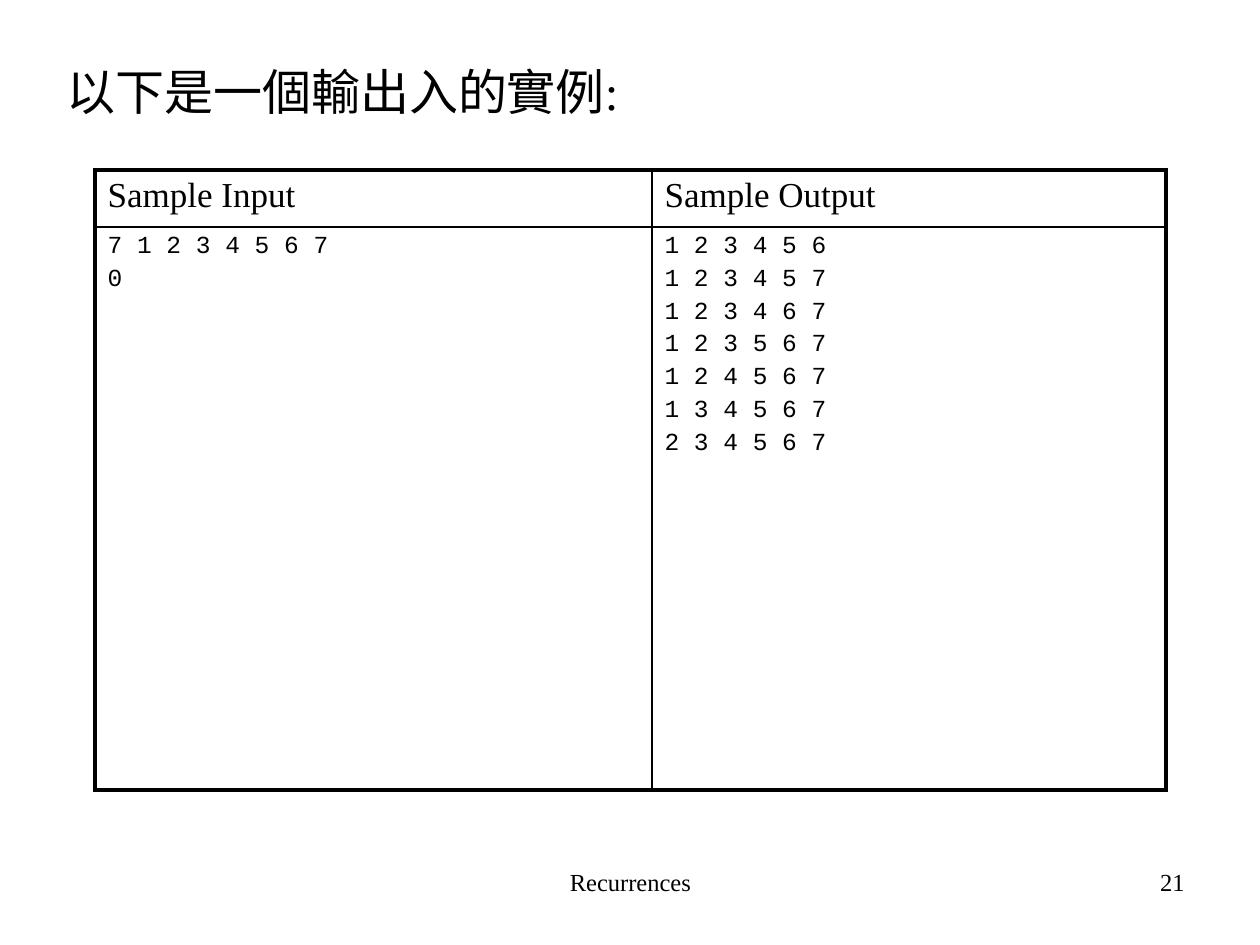
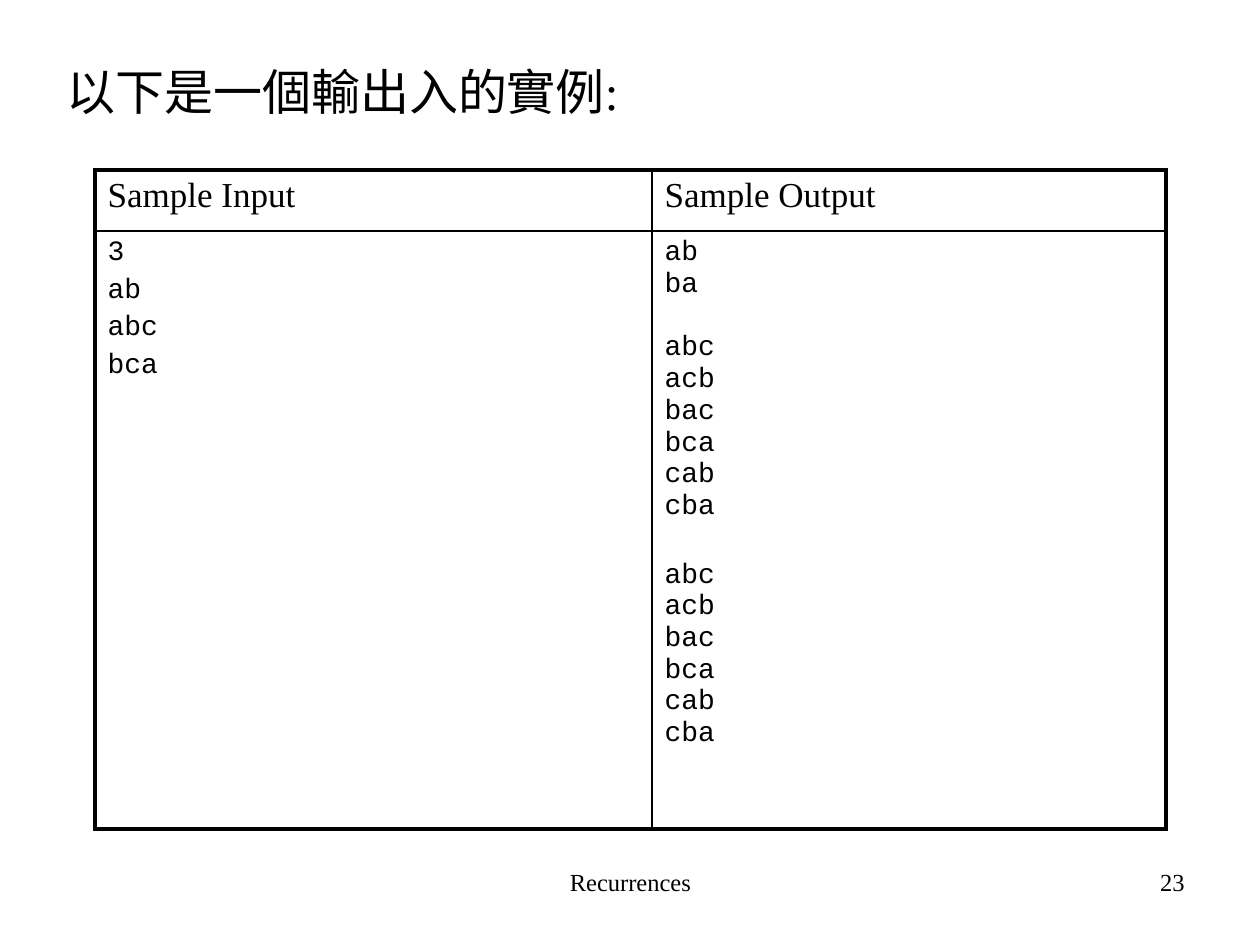
from dataclasses import dataclass

from lxml import etree
from pptx import Presentation
from pptx.dml.color import RGBColor
from pptx.enum.text import MSO_ANCHOR, MSO_AUTO_SIZE, PP_ALIGN
from pptx.oxml.ns import qn
from pptx.util import Emu, Pt

LEFT, CENTER, RIGHT = PP_ALIGN.LEFT, PP_ALIGN.CENTER, PP_ALIGN.RIGHT
TOP = MSO_ANCHOR.TOP
NO_AUTOFIT = MSO_AUTO_SIZE.NONE
TITLE_ONLY_LAYOUT = 5
PX_PER_INCH = 126


@dataclass(frozen=True)
class Theme:
    ink: str = "000000"
    paper: str = "FFFFFF"
    text_font: str = "Times New Roman"
    code_font: str = "Courier New"
    title_size: int = 28
    heading_size: int = 20
    footer_size: int = 14
    outer_border: float = 2.25
    inner_border: float = 1


@dataclass(frozen=True)
class Box:
    left: int
    top: int
    width: int
    height: int


@dataclass(frozen=True)
class Line:
    text: str
    gap: int = 0  # px above the line


@dataclass(frozen=True)
class Sample:
    page: str
    code_size: int
    row_heights: tuple[int, int]
    input_lines: list[Line]
    output_lines: list[Line]


THEME = Theme()
TITLE = "以下是一個輸出入的實例:"
FOOTER = "Recurrences"
HEADINGS = ("Sample Input", "Sample Output")

TITLE_BOX = Box(54, 55, 1134, 100)
FOOTER_BOX = Box(431, 861, 399, 66)
PAGE_BOX = Box(903, 861, 294, 66)
TABLE_LEFT, TABLE_TOP = 95, 170
COLUMN_WIDTHS = (557, 514)


def px(length: int) -> Emu:
    return Emu(round(length * 914400 / PX_PER_INCH))


def lines(texts: list[str], gap: int) -> list[Line]:
    return [Line(text, gap) for text in texts]


def group(texts: list[str], gap_above: int) -> list[Line]:
    """Closely set lines with one gap above the first."""
    return [Line(texts[0], gap_above), *lines(texts[1:], 0)]


PERMUTATIONS = ["abc", "acb", "bac", "bca", "cab", "cba"]
SAMPLES = (
    Sample(
        page="21",
        code_size=14,
        row_heights=(57, 563),
        input_lines=lines(["7 1 2 3 4 5 6 7", "0"], 5),
        output_lines=lines(
            ["1 2 3 4 5 6", "1 2 3 4 5 7", "1 2 3 4 6 7", "1 2 3 5 6 7",
             "1 2 4 5 6 7", "1 3 4 5 6 7", "2 3 4 5 6 7"], 5),
    ),
    Sample(
        page="23",
        code_size=16,
        row_heights=(61, 598),
        input_lines=lines(["3", "ab", "abc", "bca"], 6),
        output_lines=[
            *group(["ab", "ba"], 6),
            *group(PERMUTATIONS, 32),
            *group(PERMUTATIONS, 37),
        ],
    ),
)


def write(frame, content: list[Line], size: int, font: str, align=LEFT) -> None:
    frame.text = "\n".join(line.text for line in content)
    for paragraph, line in zip(frame.paragraphs, content):
        paragraph.alignment = align
        paragraph.space_before = px(line.gap)
        for run in paragraph.runs:
            run.font.size = Pt(size)
            run.font.name = font
            run.font.color.rgb = RGBColor.from_string(THEME.ink)


def add_title(slide) -> None:
    title = slide.shapes.title
    title.left, title.top = px(TITLE_BOX.left), px(TITLE_BOX.top)
    title.width, title.height = px(TITLE_BOX.width), px(TITLE_BOX.height)
    frame = title.text_frame
    frame.vertical_anchor = TOP
    frame.auto_size = NO_AUTOFIT
    write(frame, [Line(TITLE, 10)], THEME.title_size, THEME.text_font)


def add_footer_text(slide, text: str, box: Box, align) -> None:
    footer = slide.shapes.add_textbox(
        px(box.left), px(box.top), px(box.width), px(box.height))
    footer.text_frame.word_wrap = True
    write(footer.text_frame, [Line(text)], THEME.footer_size,
          THEME.text_font, align)


def set_borders(cell, row: int, column: int) -> None:
    """Thick lines on the table's outer edge, thin ones inside."""
    outer_sides = {"L": column == 0, "R": column == 1,
                   "T": row == 0, "B": row == 1}
    properties = cell._tc.get_or_add_tcPr()
    for side, is_outer in outer_sides.items():
        width = THEME.outer_border if is_outer else THEME.inner_border
        border = etree.SubElement(properties, qn(f"a:ln{side}"), w=str(Pt(width)))
        fill = etree.SubElement(border, qn("a:solidFill"))
        etree.SubElement(fill, qn("a:srgbClr"), val=THEME.ink)


def add_sample_table(slide, sample: Sample) -> None:
    table = slide.shapes.add_table(
        2, 2, px(TABLE_LEFT), px(TABLE_TOP),
        px(sum(COLUMN_WIDTHS)), px(sum(sample.row_heights))).table
    table.first_row = table.horz_banding = False
    for column, width in zip(table.columns, COLUMN_WIDTHS):
        column.width = px(width)
    for row, height in zip(table.rows, sample.row_heights):
        row.height = px(height)

    columns = (sample.input_lines, sample.output_lines)
    for index, (heading, code) in enumerate(zip(HEADINGS, columns)):
        write(table.cell(0, index).text_frame, [Line(heading, 7)],
              THEME.heading_size, THEME.text_font)
        write(table.cell(1, index).text_frame, code,
              sample.code_size, THEME.code_font)
        for row in range(2):
            cell = table.cell(row, index)
            set_borders(cell, row, index)
            cell.fill.solid()
            cell.fill.fore_color.rgb = RGBColor.from_string(THEME.paper)


def main() -> None:
    deck = Presentation()
    deck.slide_width, deck.slide_height = px(1260), px(945)
    for sample in SAMPLES:
        slide = deck.slides.add_slide(deck.slide_layouts[TITLE_ONLY_LAYOUT])
        add_title(slide)
        add_sample_table(slide, sample)
        add_footer_text(slide, FOOTER, FOOTER_BOX, CENTER)
        add_footer_text(slide, sample.page, PAGE_BOX, RIGHT)
    deck.save("out.pptx")


if __name__ == "__main__":
    main()
